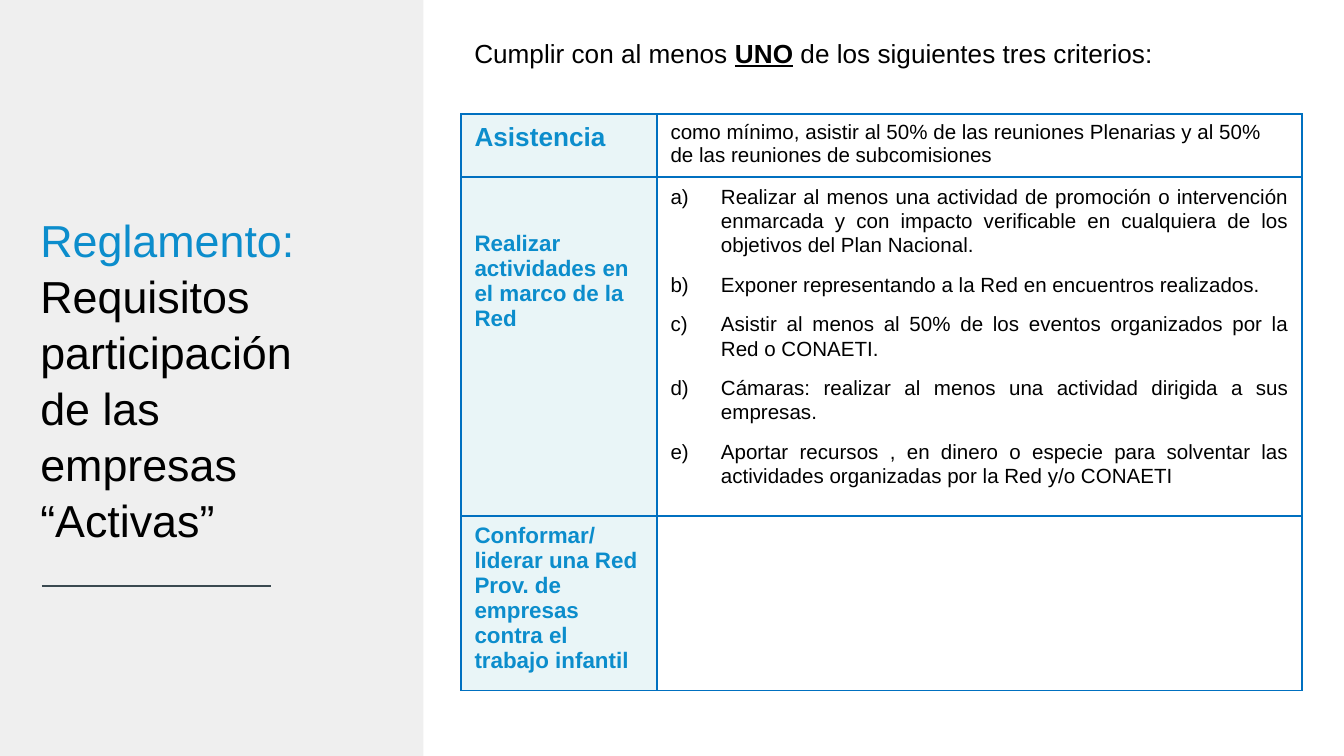
from lxml import etree
from pptx import Presentation
from pptx.dml.color import RGBColor
from pptx.enum.shapes import MSO_CONNECTOR, MSO_SHAPE
from pptx.enum.text import MSO_ANCHOR, MSO_AUTO_SIZE, PP_ALIGN
from pptx.oxml.ns import qn
from pptx.util import Pt

LEFT, JUSTIFY = PP_ALIGN.LEFT, PP_ALIGN.JUSTIFY
BLACK = RGBColor(0x00, 0x00, 0x00)
WHITE = RGBColor(0xFF, 0xFF, 0xFF)
BLUE = RGBColor(0x0C, 0x8D, 0xCC)
BORDER_BLUE = RGBColor(0x00, 0x70, 0xC0)
PALE_BLUE = RGBColor(0xE9, 0xF5, 0xF7)
PANEL_GRAY = RGBColor(0xEF, 0xEF, 0xEF)
RULE_GRAY = RGBColor(0x3A, 0x49, 0x50)
FONT = "Arial"

TITLE = [
    ("Reglamento:", BLUE),
    ("Requisitos participación de las empresas", BLACK),
    ("“Activas”", BLACK),
]
INTRO = [
    ("Cumplir con al menos ", False),
    ("UNO", True),
    (" de los siguientes tres criterios:", False),
]
ATTENDANCE = ("como mínimo, asistir al 50% de las reuniones Plenarias "
              "y al 50% de las reuniones de subcomisiones")
ACTIVITIES = [
    "Realizar al menos una actividad de promoción o intervención enmarcada y con "
    "impacto verificable en cualquiera de los objetivos del Plan Nacional.",
    "Exponer representando a la Red en encuentros realizados.",
    "Asistir al menos al 50% de los eventos organizados por la Red o CONAETI.",
    "Cámaras: realizar al menos una actividad dirigida a sus empresas.",
    "Aportar recursos , en dinero o especie para solventar las actividades "
    "organizadas por la Red y/o CONAETI",
]
# criterion, criterion size, top margin, row height, details
CRITERIA = [
    ("Asistencia", 14, 3.6, 33.75, [ATTENDANCE]),
    ("Realizar actividades en el marco de la Red", 12, 29, 181.5, ACTIVITIES),
    ("Conformar/ liderar una Red Prov. de empresas contra el trabajo infantil",
     12, 3.6, 93.5, []),
]
COLUMN_WIDTHS = (105, 345.6)
TABLE_LEFT, TABLE_TOP = 247, 61.2
LIST_INDENT = 27


def format_paragraph(paragraph, size, color=BLACK, bold=False, align=LEFT):
    paragraph.alignment = align
    font = paragraph.font
    font.name, font.size, font.bold = FONT, Pt(size), bold
    font.color.rgb = color


def space_paragraph(paragraph):
    paragraph.line_spacing = 1.07
    paragraph.space_after = Pt(8)


def letter_paragraph(paragraph):
    """Number the paragraph a), b), c) with a hanging indent."""
    properties = paragraph._p.get_or_add_pPr()
    properties.set("marL", str(Pt(LIST_INDENT)))
    properties.set("indent", str(-Pt(LIST_INDENT)))
    numbering = etree.SubElement(properties, qn("a:buAutoNum"))
    numbering.set("type", "alphaLcParenR")


def style_cell(cell, fill):
    properties = cell._tc.get_or_add_tcPr()
    for side in ("a:lnL", "a:lnR", "a:lnT", "a:lnB"):
        line = etree.SubElement(properties, qn(side), w=str(Pt(1)))
        solid = etree.SubElement(line, qn("a:solidFill"))
        etree.SubElement(solid, qn("a:srgbClr"), val=str(BORDER_BLUE))
    cell.fill.solid()
    cell.fill.fore_color.rgb = fill


def add_paragraphs(frame, count):
    """Return count paragraphs, the first being the one already there."""
    return [frame.paragraphs[0]] + [frame.add_paragraph() for _ in range(count - 1)]


def add_panel(slide):
    panel = slide.shapes.add_shape(MSO_SHAPE.RECTANGLE, 0, 0, Pt(226.8), Pt(405))
    panel.shadow.inherit = False
    panel.fill.solid()
    panel.fill.fore_color.rgb = PANEL_GRAY
    panel.line.fill.background()
    # Behind the title placeholder
    slide.shapes._spTree.insert(2, panel._element)

    rule = slide.shapes.add_connector(
        MSO_CONNECTOR.STRAIGHT, Pt(22.5), Pt(314), Pt(145), Pt(314))
    rule.line.color.rgb = RULE_GRAY
    rule.line.width = Pt(0.75)
    etree.SubElement(rule._element.spPr, qn("a:effectLst"))


def fill_title(title):
    title.left, title.top, title.width, title.height = Pt(14.4), Pt(109.4), Pt(176.4), Pt(211)
    frame = title.text_frame
    frame.auto_size = MSO_AUTO_SIZE.NONE
    frame.vertical_anchor = MSO_ANCHOR.TOP
    frame.word_wrap = True
    for paragraph, (text, color) in zip(add_paragraphs(frame, len(TITLE)), TITLE):
        paragraph.add_run().text = text
        format_paragraph(paragraph, 24, color)
        paragraph.line_spacing = 1.04


def add_intro(slide):
    box = slide.shapes.add_textbox(Pt(TABLE_LEFT), Pt(15.1), Pt(441.4), Pt(23.8))
    box.text_frame.word_wrap = True
    paragraph = box.text_frame.paragraphs[0]
    format_paragraph(paragraph, 14, align=JUSTIFY)
    space_paragraph(paragraph)
    for text, emphasized in INTRO:
        run = paragraph.add_run()
        run.text = text
        if emphasized:
            run.font.bold = run.font.underline = True


def add_criteria_table(slide):
    height = sum(row[3] for row in CRITERIA)
    table = slide.shapes.add_table(
        len(CRITERIA), len(COLUMN_WIDTHS), Pt(TABLE_LEFT), Pt(TABLE_TOP),
        Pt(sum(COLUMN_WIDTHS)), Pt(height)).table
    table.first_row = table.horz_banding = False
    for column, width in zip(table.columns, COLUMN_WIDTHS):
        column.width = Pt(width)

    for index, (criterion, size, margin, row_height, details) in enumerate(CRITERIA):
        table.rows[index].height = Pt(row_height)
        name_cell, detail_cell = table.cell(index, 0), table.cell(index, 1)
        style_cell(name_cell, PALE_BLUE)
        style_cell(detail_cell, WHITE)

        name_cell.margin_top = Pt(margin)
        name_cell.text = criterion
        format_paragraph(name_cell.text_frame.paragraphs[0], size, BLUE, bold=True)
        if index == 0:
            space_paragraph(name_cell.text_frame.paragraphs[0])

        is_list = len(details) > 1
        for paragraph, text in zip(
                add_paragraphs(detail_cell.text_frame, len(details)), details):
            paragraph.add_run().text = text
            format_paragraph(paragraph, 11, align=JUSTIFY if is_list else LEFT)
            if is_list:
                space_paragraph(paragraph)
                letter_paragraph(paragraph)


def main():
    presentation = Presentation()
    presentation.slide_width, presentation.slide_height = Pt(720), Pt(405)
    title_only = presentation.slide_layouts[5]
    slide = presentation.slides.add_slide(title_only)
    add_panel(slide)
    fill_title(slide.shapes.title)
    add_criteria_table(slide)
    add_intro(slide)
    presentation.save("out.pptx")


if __name__ == "__main__":
    main()
